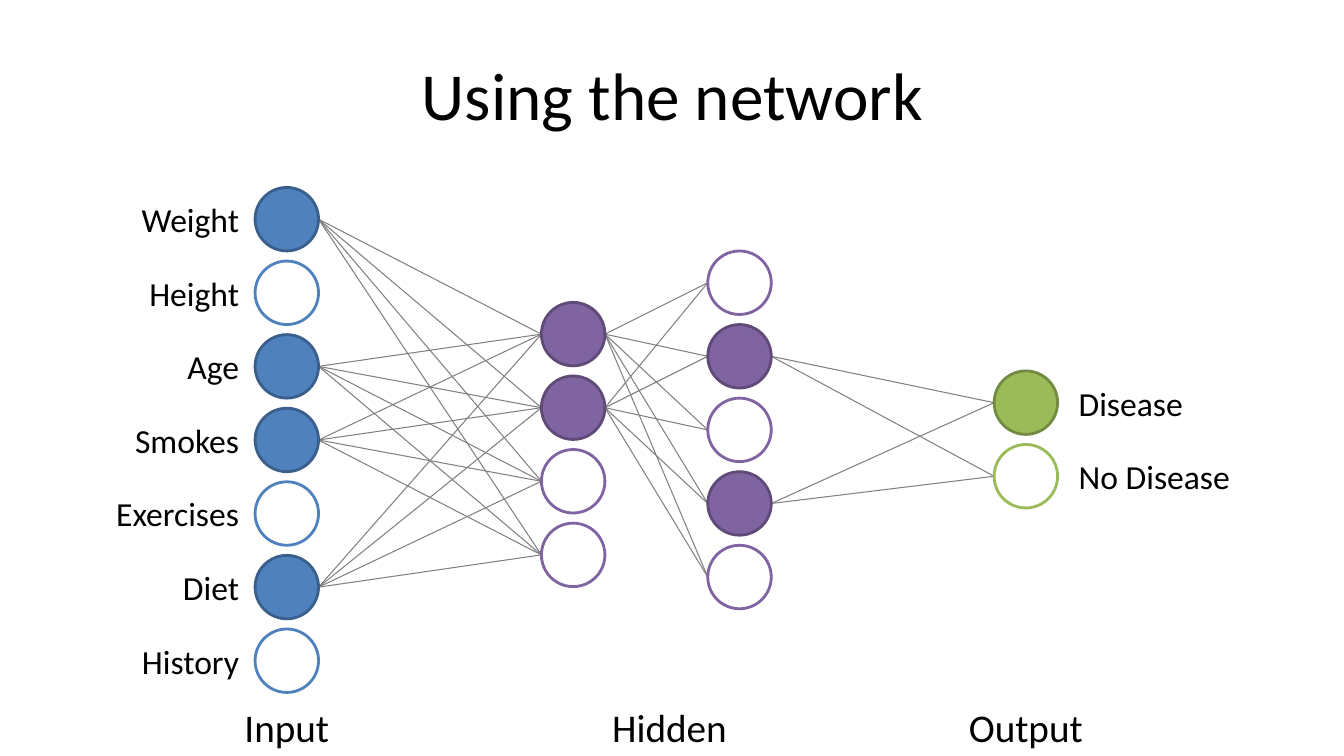
import itertools

import pptx
import pptx.dml.color
import pptx.enum.shapes
import pptx.enum.text
import pptx.oxml.ns
import pptx.util
from pptx.util import Inches

ALIGN = pptx.enum.text.PP_ALIGN
FONT = "Calibri"
BLACK, WHITE, GRAY = "000000", "FFFFFF", "808080"
NODE = 0.63
PITCH = 0.73
LABEL_HEIGHT = 0.5

BLUE = ("4F81BD", "3A5F8C")
PURPLE = ("8064A2", "5F4A78")
GREEN = ("9BBB59", "738A42")


def color(hex_string):
    """Return the RGB colour for a hex string."""
    return pptx.dml.color.RGBColor.from_string(hex_string)


def style_text(frame, text, size, align):
    """Put one formatted line of text into a text frame."""
    frame.text = text
    frame.vertical_anchor = pptx.enum.text.MSO_ANCHOR.MIDDLE
    paragraph = frame.paragraphs[0]
    paragraph.alignment = align
    font = paragraph.runs[0].font
    font.name, font.size = FONT, pptx.util.Pt(size)
    font.color.rgb = color(BLACK)


def add_title(slide, text, left, top, width, height):
    """Place and format the slide title."""
    title = slide.shapes.title
    title.left, title.top = Inches(left), Inches(top)
    title.width, title.height = Inches(width), Inches(height)
    style_text(title.text_frame, text, 48, ALIGN.CENTER)


def add_label(slide, text, left, top, width, height, size, align):
    """Add a single-line text box."""
    label = slide.shapes.add_textbox(
        Inches(left), Inches(top), Inches(width), Inches(height))
    label.text_frame.word_wrap = True
    style_text(label.text_frame, text, size, align)


def add_caption(slide, text, center):
    """Add a layer caption centred on the given position."""
    width = 1.6
    add_label(slide, text, center - width / 2, 6.93, width, 0.57, 28,
              ALIGN.CENTER)


def add_layer(slide, left, top, active, colors):
    """Stack the nodes of a layer, filling those that are active."""
    fill, edge = colors
    for row, is_active in enumerate(active):
        node = slide.shapes.add_shape(
            pptx.enum.shapes.MSO_SHAPE.OVAL, Inches(left),
            Inches(top + row * PITCH), Inches(NODE), Inches(NODE))
        node.shadow.inherit = False
        node.fill.solid()
        node.fill.fore_color.rgb = color(fill if is_active else WHITE)
        node.line.color.rgb = color(edge if is_active else fill)
        node.line.width = pptx.util.Pt(2)


def add_node_labels(slide, names, left, top, width, align):
    """Add one label beside each node of a layer starting at top."""
    for row, name in enumerate(names):
        label_top = top + row * PITCH + (NODE - LABEL_HEIGHT) / 2
        add_label(slide, name, left, label_top, width, LABEL_HEIGHT, 24, align)


def connect_layers(slide, source, target):
    """Link every active node of one layer to all nodes of the next."""
    source_left, source_top, active, _ = source
    target_left, target_top, targets, _ = target
    active_rows = [row for row, is_active in enumerate(active) if is_active]
    for start, end in itertools.product(active_rows, range(len(targets))):
        link = slide.shapes.add_connector(
            pptx.enum.shapes.MSO_CONNECTOR.STRAIGHT,
            Inches(source_left + NODE),
            Inches(source_top + start * PITCH + NODE / 2),
            Inches(target_left),
            Inches(target_top + end * PITCH + NODE / 2))
        link.line.color.rgb = color(GRAY)
        link.line.width = pptx.util.Pt(0.75)
        properties = link._element.spPr
        properties.append(properties.makeelement(
            pptx.oxml.ns.qn("a:effectLst"), {}))


def add_network(slide):
    """Draw the layers with their links, labels and captions."""
    inputs = (2.53, 1.86, (1, 0, 1, 1, 0, 1, 0), BLUE)
    first_hidden = (5.37, 3, (1, 1, 0, 0), PURPLE)
    second_hidden = (7.02, 2.49, (0, 1, 0, 1, 0), PURPLE)
    outputs = (9.86, 3.68, (1, 0), GREEN)
    layers = (inputs, first_hidden, second_hidden, outputs)

    for source, target in itertools.pairwise(layers):
        connect_layers(slide, source, target)
    for layer in layers:
        add_layer(slide, *layer)

    features = ("Weight", "Height", "Age", "Smokes", "Exercises", "Diet",
                "History")
    add_node_labels(slide, features, 0.87, inputs[1], 1.6, ALIGN.RIGHT)
    add_node_labels(slide, ("Disease", "No Disease"), 10.6, outputs[1], 1.9,
                    ALIGN.LEFT)

    add_caption(slide, "Input", inputs[0] + NODE / 2)
    add_caption(slide, "Hidden", 6.64)
    add_caption(slide, "Output", outputs[0] + NODE / 2)


def main():
    """Build and save the presentation."""
    presentation = pptx.Presentation()
    presentation.slide_width = Inches(13.33)
    presentation.slide_height = Inches(7.5)
    slide = presentation.slides.add_slide(presentation.slide_layouts[5])
    add_title(slide, "Using the network", 0.67, 0.3, 12, 1.25)
    add_network(slide)
    presentation.save("out.pptx")


if __name__ == "__main__":
    main()
